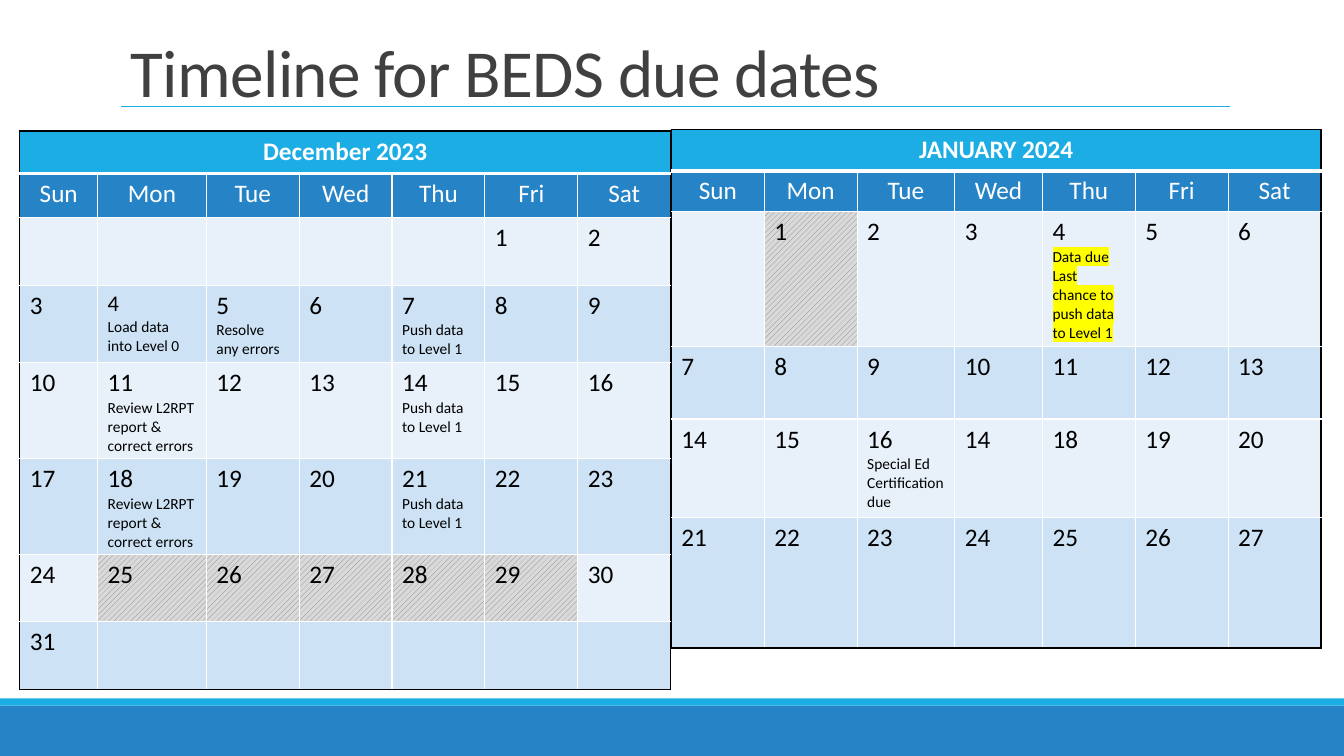
"""Build the slide with the December and January reporting calendars."""
import lxml.etree as etree
import pptx
import pptx.dml.color
import pptx.enum.dml
import pptx.enum.shapes
import pptx.enum.text
import pptx.oxml.ns
import pptx.util

Cm = pptx.util.Cm
Pt = pptx.util.Pt
qn = pptx.oxml.ns.qn

COLORS = {
    "sky": "1CADE4",
    "blue": "2683C6",
    "light": "E8F1FA",
    "band": "CDE3F5",
    "hatch": "808080",
    "hatch_ground": "D9D9D9",
    "marker": "FFFF00",
    "title": "404040",
    "white": "FFFFFF",
    "black": "000000",
}
FONT = "Calibri"
WEEKDAYS = ["Sun", "Mon", "Tue", "Wed", "Thu", "Fri", "Sat"]
PUSH = "Push data to Level 1"
REVIEW = "Review L2RPT report & correct errors"


def rgb(name):
    return pptx.dml.color.RGBColor.from_string(COLORS[name])


def format_paragraph(paragraph, size, color="black", bold=False, marker=None):
    for run in paragraph.runs:
        run.font.name = FONT
        run.font.size = Pt(size)
        run.font.bold = bold
        run.font.color.rgb = rgb(color)
        if marker:
            highlight = etree.Element(qn("a:highlight"))
            etree.SubElement(highlight, qn("a:srgbClr"), val=COLORS[marker])
            run.font.fill
            run._r.rPr.find(qn("a:solidFill")).addnext(highlight)
    for line_break in paragraph._p.findall(qn("a:br")):
        etree.SubElement(line_break, qn("a:rPr"), sz=str(size * 100))


def add_bar(slide, top, height, color):
    bar = slide.shapes.add_shape(
        pptx.enum.shapes.MSO_SHAPE.RECTANGLE, 0, Cm(top), Cm(33.87), Cm(height))
    bar.shadow.inherit = False
    bar.fill.solid()
    bar.fill.fore_color.rgb = rgb(color)
    bar.line.fill.background()


def add_rule(slide, left, right, y):
    rule = slide.shapes.add_connector(
        pptx.enum.shapes.MSO_CONNECTOR.STRAIGHT, Cm(left), Cm(y), Cm(right), Cm(y))
    rule.line.color.rgb = rgb("sky")
    rule.line.width = Pt(1)
    etree.SubElement(rule._element.spPr, qn("a:effectLst"))


def add_title(slide, text):
    title = slide.shapes.add_textbox(Cm(3.05), Cm(0.23), Cm(27.94), Cm(2.69))
    frame = title.text_frame
    frame.word_wrap = True
    frame.vertical_anchor = pptx.enum.text.MSO_ANCHOR.BOTTOM
    frame.text = text
    heading = frame.paragraphs[0]
    heading.line_spacing = 0.85
    format_paragraph(heading, 48, "title")
    heading.runs[0]._r.rPr.set("spc", "-50")


def set_borders(cell, row, column, last_row):
    heavy = {"T": row == 1, "B": row == 0}
    outer = {"L": column == 0, "R": column == 6 or row == 0,
             "T": row == 0, "B": row == last_row}
    for side in "LRTB":
        width = Pt(3 if heavy.get(side) else 1)
        border = etree.SubElement(
            cell._tc.get_or_add_tcPr(), qn(f"a:ln{side}"), w=str(int(width)))
        fill = etree.SubElement(border, qn("a:solidFill"))
        color = "black" if outer[side] else "white"
        etree.SubElement(fill, qn("a:srgbClr"), val=COLORS[color])


def fill_cell(cell, color):
    if color == "hatch":
        cell.fill.patterned()
        cell.fill.pattern = pptx.enum.dml.MSO_PATTERN.WIDE_UPWARD_DIAGONAL
        cell.fill.fore_color.rgb = rgb("hatch")
        cell.fill.back_color.rgb = rgb("hatch_ground")
    else:
        cell.fill.solid()
        cell.fill.fore_color.rgb = rgb(color)


def write_heading(cell, text, bold=False):
    cell.text_frame.text = text
    heading = cell.text_frame.paragraphs[0]
    heading.alignment = pptx.enum.text.PP_ALIGN.CENTER
    format_paragraph(heading, 18, "white", bold)


def write_day(cell, day, note=None, size=18, marker=None):
    cell.text_frame.text = str(day)
    format_paragraph(cell.text_frame.paragraphs[0], size)
    if note:
        task = cell.text_frame.add_paragraph()
        task.text = note
        format_paragraph(task, 11, marker=marker)


def add_calendar(slide, month, left, top, widths, heights, first_column, days,
                 notes, holidays, small_days=(), marked_days=()):
    calendar = slide.shapes.add_table(
        len(heights), 7, Cm(left), Cm(top), Cm(sum(widths)), Cm(sum(heights))).table
    calendar.first_row = calendar.horz_banding = False
    for column, width in zip(calendar.columns, widths):
        column.width = Cm(width)
    for week, height in zip(calendar.rows, heights):
        week.height = Cm(height)
    calendar.cell(0, 0).merge(calendar.cell(0, 6))
    write_heading(calendar.cell(0, 0), month, bold=True)

    for row in range(len(heights)):
        for column, weekday in enumerate(WEEKDAYS):
            cell = calendar.cell(row, column)
            set_borders(cell, row, column, len(heights) - 1)
            if row == 0:
                fill_cell(cell, "sky")
                continue
            if row == 1:
                fill_cell(cell, "blue")
                write_heading(cell, weekday)
                continue
            index = (row - 2) * 7 + column - first_column
            day = days[index] if 0 <= index < len(days) else None
            shade = "band" if row % 2 else "light"
            fill_cell(cell, "hatch" if day in holidays else shade)
            if day:
                write_day(cell, day, notes.get(day), 16 if day in small_days else 18,
                          "marker" if day in marked_days else None)


def main():
    deck = pptx.Presentation()
    deck.slide_width, deck.slide_height = Cm(33.87), Cm(19.05)
    slide = deck.slides.add_slide(deck.slide_layouts[6])

    add_bar(slide, 17.78, 1.27, "blue")
    add_bar(slide, 17.6, 0.18, "sky")
    add_rule(slide, 3.05, 30.99, 2.69)
    add_title(slide, "Timeline for BEDS due dates")

    january_days = [*range(1, 17), 14, *range(18, 28)]
    january_notes = {4: "Data due\nLast chance to push data to Level 1",
                     16: "Special Ed Certification due"}
    add_calendar(slide, "JANUARY 2024", 16.92, 3.27,
                 [2.34, 2.34, 2.46, 2.21, 2.34, 2.34, 2.34],
                 [1.03, 1.03, 3.4, 1.83, 2.49, 3.28],
                 1, january_days, january_notes, {1}, marked_days={4})

    december_notes = {4: "Load data into Level 0", 5: "Resolve any errors",
                      7: PUSH, 11: REVIEW, 14: PUSH, 18: REVIEW, 21: PUSH}
    add_calendar(slide, "December 2023", 0.5, 3.3,
                 [1.96, 2.74] + [2.34] * 5, [1.07, 1.12] + [1.7] * 6,
                 5, range(1, 32), december_notes, range(25, 30), small_days={4})

    deck.save("out.pptx")


if __name__ == "__main__":
    main()
